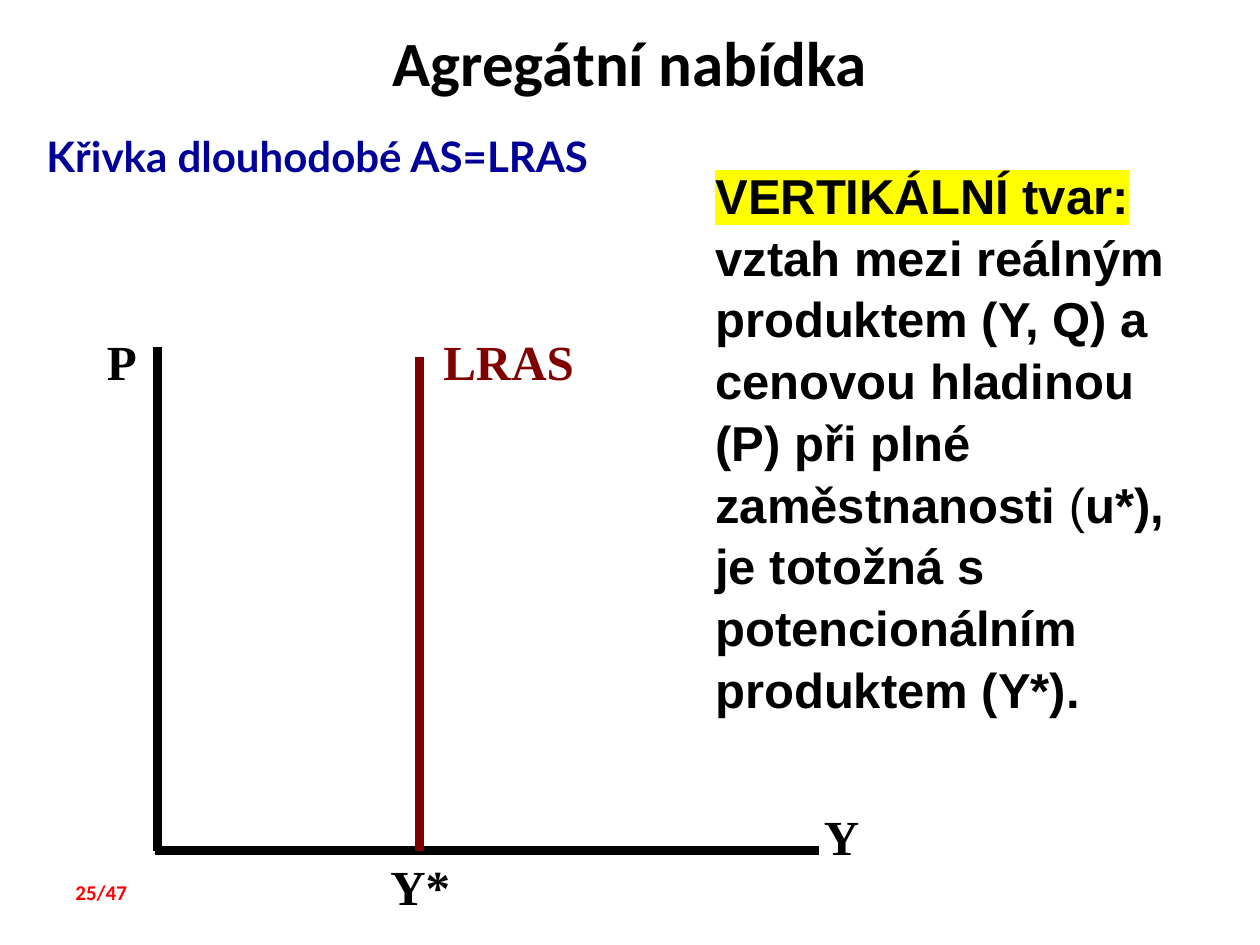
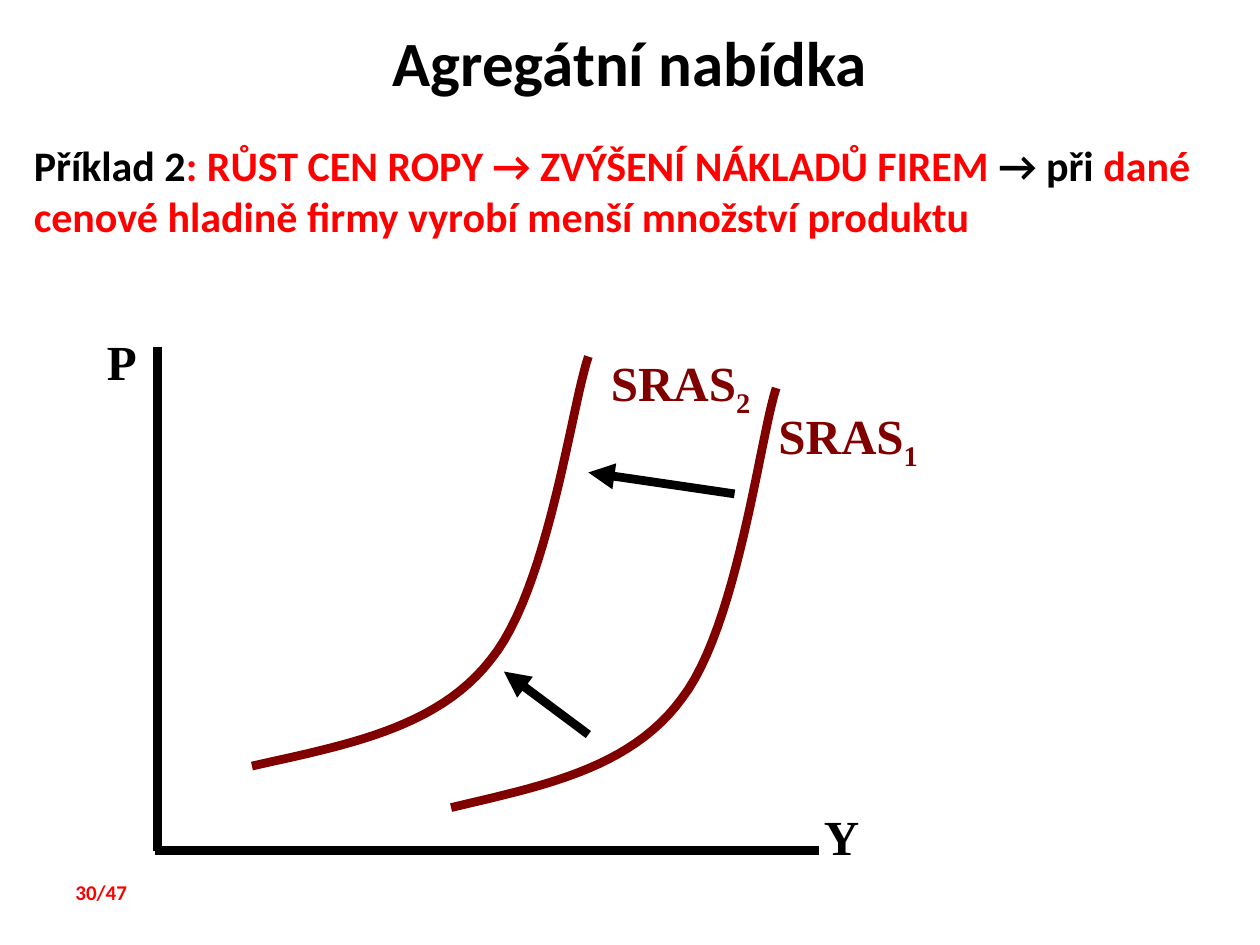
from lxml import etree
from pptx import Presentation
from pptx.dml.color import RGBColor
from pptx.enum.shapes import MSO_CONNECTOR, MSO_SHAPE
from pptx.enum.text import MSO_ANCHOR, PP_ALIGN
from pptx.oxml.ns import qn
from pptx.util import Inches, Pt

STRAIGHT = MSO_CONNECTOR.STRAIGHT
RECTANGLE = MSO_SHAPE.RECTANGLE
MIDDLE = MSO_ANCHOR.MIDDLE
CENTER = PP_ALIGN.CENTER

BLACK, WHITE, RED = "000000", "FFFFFF", "FF0000"
NAVY, MAROON, YELLOW = "000099", "800000", "FFFF00"
SERIF, SANS, HEADING, SUBTITLE = "Times New Roman", "Arial", "Calibri", "Lato"

CHART_BOX = (1.25, 2.75, 5.25, 4)
# Supply curve in a unit box: a start point, then two cubic Bézier segments
CURVE_START = (0, 1)
CURVE_SEGMENTS = [
    ((0.27, 0.95), (0.55, 0.91), (0.71, 0.74)),
    ((0.88, 0.57), (0.95, 0.12), (1, 0)),
]
CURVE_STEPS = 24


def rgb(value):
    return RGBColor.from_string(value)


def add_run(p, text, font=SERIF, size=28, color=BLACK, bold=True,
            highlight=None, baseline=None):
    r = p.add_run()
    r.text = text
    r.font.size = Pt(size)
    r.font.bold = bold
    r.font.color.rgb = rgb(color)
    rpr = r.font._element
    if highlight:
        mark = etree.SubElement(rpr, qn("a:highlight"))
        etree.SubElement(mark, qn("a:srgbClr"), val=highlight)
    if baseline:
        rpr.set("baseline", str(baseline * 1000))
    r.font.name = font


def add_text(s, box, runs, line_spacing=None, **fmt):
    """Add a text box; runs is a string or a list of (text, own format)."""
    tf = s.shapes.add_textbox(*map(Inches, box)).text_frame
    tf.word_wrap = True
    p = tf.paragraphs[0]
    if line_spacing:
        p.line_spacing = line_spacing
    for text, own in [(runs, {})] if isinstance(runs, str) else runs:
        add_run(p, text, **{**fmt, **own})


def add_line(s, start, end, color=BLACK, width=5, arrow=False):
    line = s.shapes.add_connector(STRAIGHT, *map(Inches, (*start, *end)))
    line.line.color.rgb = rgb(color)
    line.line.width = Pt(width)
    if arrow:
        etree.SubElement(line.line._get_or_add_ln(), qn("a:tailEnd"), type="triangle")
    etree.SubElement(line._element.spPr, qn("a:effectLst"))


def curve_points():
    points = [CURVE_START]
    for segment in CURVE_SEGMENTS:
        a, (b, c, d) = points[-1], segment
        for step in range(1, CURVE_STEPS + 1):
            t = step / CURVE_STEPS
            u = 1 - t
            points.append(tuple(
                u**3 * a[i] + 3 * u * u * t * b[i] + 3 * u * t * t * c[i] + t**3 * d[i]
                for i in (0, 1)))
    return points


def add_supply_curve(s, box, index, label_offset):
    """Draw a short-run supply curve and its label, offset from the curve's top end."""
    x, y, w, h = box
    points = [(Inches(x + w * px), Inches(y + h * py)) for px, py in curve_points()]
    builder = s.shapes.build_freeform(*points[0])
    builder.add_line_segments(points[1:], close=False)
    curve = builder.convert_to_shape()
    curve.shadow.inherit = False
    curve.fill.background()
    curve.line.color.rgb = rgb(MAROON)
    curve.line.width = Pt(5)
    dx, dy = label_offset
    add_text(s, (x + w + dx, y + dy, 1.42, 0.57),
             [("SRAS", {}), (index, {"baseline": -25})], color=MAROON)


def add_axes(s, box):
    x, y, w, h = box
    add_line(s, (x, y), (x, y + h), width=5.5)
    add_line(s, (x - 0.02, y + h), (x + w, y + h))
    add_text(s, (x - 0.5, y - 0.17, 0.67, 0.57), "P")
    add_text(s, (x + w - 0.06, y + h - 0.4, 0.67, 0.57), "Y")


def add_frame(prs, page):
    """Add a slide with the shared title and page number."""
    s = prs.slides.add_slide(prs.slide_layouts[6])
    band = s.shapes.add_shape(RECTANGLE, 0, Inches(0.14), prs.slide_width, Inches(0.7))
    band.shadow.inherit = False
    band.fill.solid()
    band.fill.fore_color.rgb = rgb(WHITE)
    band.line.fill.background()
    tf = band.text_frame
    tf.vertical_anchor = MIDDLE
    p = tf.paragraphs[0]
    p.alignment = CENTER
    add_run(p, "Agregátní nabídka", font=HEADING, size=36)
    add_text(s, (0.5, 6.93, 0.92, 0.3), f"{page}/47", font=HEADING, size=12, color=RED)
    return s


def long_run_slide(prs):
    s = add_frame(prs, 25)
    add_text(s, (0.27, 0.99, 8.73, 0.51), "Křivka dlouhodobé AS=LRAS",
             font=SUBTITLE, size=24, color=NAVY)
    add_axes(s, CHART_BOX)
    x, y, _, h = CHART_BOX
    lras_x = x + 2.08
    add_line(s, (lras_x, y + h), (lras_x, y + 0.08), color=MAROON)
    add_text(s, (lras_x + 0.09, y - 0.17, 1.42, 0.57), "LRAS", color=MAROON)
    add_text(s, (lras_x - 0.33, y + h, 1, 0.57), "Y*")
    add_text(s, (5.58, 1.24, 3.87, 4.95), [
        ("VERTIKÁLNÍ tvar: ", {"highlight": YELLOW}),
        ("vztah mezi reálným produktem (Y, Q) a cenovou hladinou (P) "
         "při plné zaměstnanosti", {}),
        (" (", {"bold": False}),
        ("u*), je totožná s potencionálním produktem (Y*).", {}),
    ], font=SANS, line_spacing=1.05)


def short_run_slide(prs):
    s = add_frame(prs, 30)
    add_text(s, (0.17, 1.06, 9.6, 1.31), [
        ("Příklad 2", {}),
        (": RŮST CEN ROPY → ZVÝŠENÍ NÁKLADŮ FIREM ", {"color": RED}),
        ("→ při ", {}),
        ("dané cenové hladině firmy vyrobí menší množství produktu", {"color": RED}),
    ], font=HEADING, size=24)
    add_axes(s, CHART_BOX)
    add_supply_curve(s, (2, 2.83, 2.67, 3.25), "2", (0.08, -0.08))
    add_supply_curve(s, (3.58, 3.08, 2.58, 3.33), "1", (-0.08, 0.09))
    add_line(s, (4.67, 5.83), (4, 5.33), arrow=True)
    add_line(s, (5.83, 3.92), (4.67, 3.75), arrow=True)


def main():
    prs = Presentation()
    prs.slide_width, prs.slide_height = Inches(10), Inches(7.5)
    long_run_slide(prs)
    short_run_slide(prs)
    prs.save("out.pptx")


if __name__ == "__main__":
    main()
